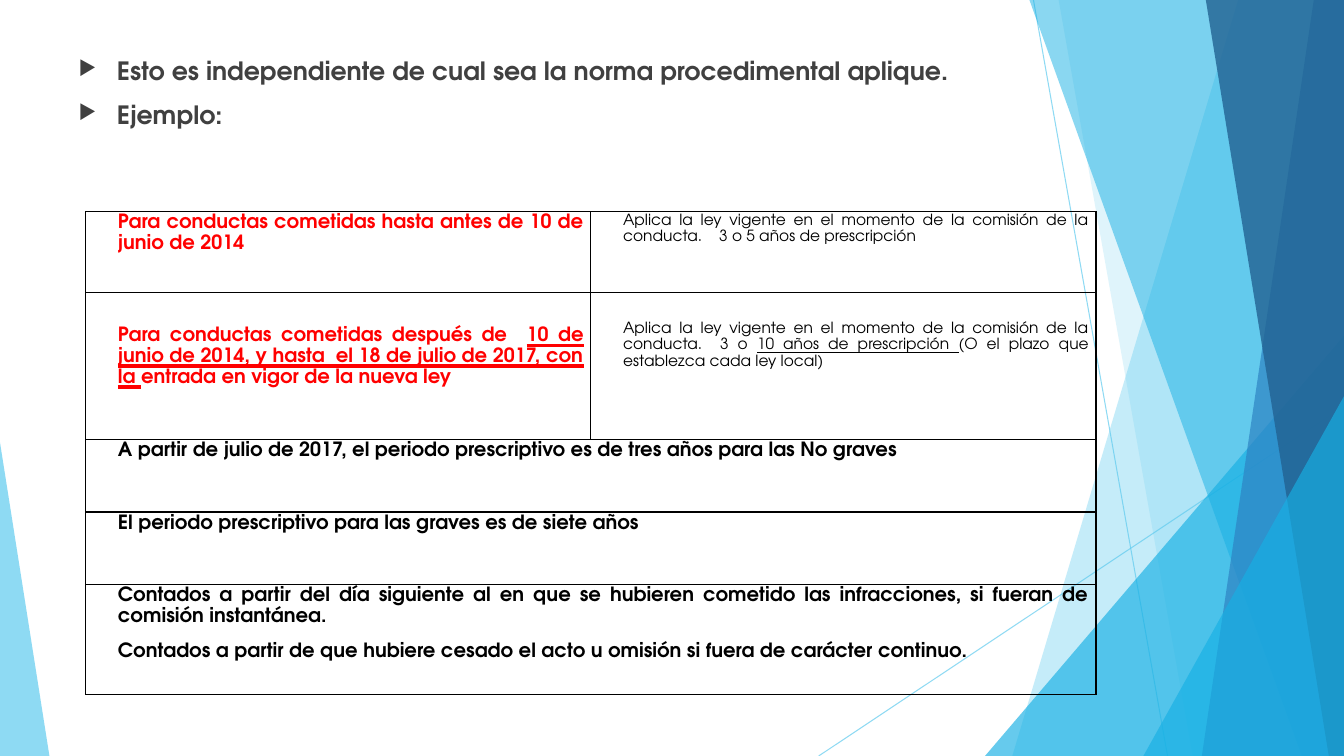
from pptx import Presentation
from pptx.dml.color import RGBColor
from pptx.enum.shapes import MSO_CONNECTOR, MSO_SHAPE
from pptx.enum.text import MSO_ANCHOR, MSO_AUTO_SIZE, MSO_UNDERLINE, PP_ALIGN
from pptx.oxml.ns import qn
from pptx.util import Inches, Pt
from lxml import etree

LINE = MSO_CONNECTOR.STRAIGHT
TRI = MSO_SHAPE.ISOSCELES_TRIANGLE
JUST = PP_ALIGN.JUSTIFY
TOP = MSO_ANCHOR.TOP
NO_FIT = MSO_AUTO_SIZE.NONE
HEAVY = MSO_UNDERLINE.HEAVY_LINE

FONT = "TeX Gyre Adventor"
WIDE, HIGH = 13.33, 7.5
SKY, CYAN, BLUE, NAVY = "5FCBEF", "17B0E4", "2E83C3", "226292"

RAYS = [(10.25, 0, 11.58, HIGH), (WIDE, 4.03, 8.12, HIGH)]
# Bands reach the right edge: x at top, x at bottom, colour, opacity
# Triangles: left, top, width, height, apex, colour, opacity
DECOR = [
    ("band", (12.28, 10.04), SKY, 36),
    ("band", (10.5, 11.83), SKY, 20),
    ("tri", (9.77, 3.33, 3.56, 4.17, 1), CYAN, 66),
    ("band", (10.21, 12.91), CYAN, 50),
    ("band", (13.03, 11.92), BLUE, 70),
    ("band", (11.96, 13.18), NAVY, 80),
    ("tri", (11.34, 3.93, 1.99, 3.57, 1), CYAN, 66),
    ("tri", (0, 4.39, 0.49, 3.11, 0), SKY, 70),
]

POINTS = [
    "Esto es independiente de cual sea la norma procedimental aplique.",
    "Ejemplo:",
]
HEAD = {"size": Pt(18), "bold": True, "name": FONT}
STRONG = {"size": Pt(14), "bold": True, "name": FONT}
PLAIN = {"size": Pt(11), "bold": False, "name": FONT}

COLS = [5.01, 5.01]
ROWS = [0.8, 1.46, 0.72, 0.72, 1.09]
# Each cell: format, colour, top margin, paragraphs made of (text, underline)
RULES = [
    [
        (STRONG, "FF0000", 0, [[
            ("Para conductas cometidas hasta antes de 10 de junio de 2014", False)]]),
        (PLAIN, "000000", 0, [[
            ("Aplica la ley vigente en el momento de la comisión de la conducta.    "
             "3 o 5 años de prescripción", False)]]),
    ],
    [
        (STRONG, "FF0000", 0.32, [[
            ("Para conductas cometidas después de  ", False),
            ("10 de junio de 2014, y hasta  el 18 de julio de 2017, con la ", HEAVY),
            ("entrada en vigor de la nueva ley", False)]]),
        (PLAIN, "000000", 0.27, [[
            ("Aplica la ley vigente en el momento de la comisión de la conducta.  3 o ", False),
            ("10 años de prescripción ", True),
            ("(O el plazo que establezca cada ley local)", False)]]),
    ],
    [(STRONG, "000000", 0, [[
        ("A partir de julio de 2017, el periodo prescriptivo es de tres años "
         "para las No graves", False)]])],
    [(STRONG, "000000", 0, [[
        ("El periodo prescriptivo para las graves es de siete años", False)]])],
    [(STRONG, "000000", 0, [
        [("Contados a partir del día siguiente al en que se hubieren cometido "
          "las infracciones, si fueran de comisión instantánea.", False)],
        [("Contados a partir de que hubiere cesado el acto u omisión si fuera "
          "de carácter continuo.", False)]])],
]


def rgb(code):
    return RGBColor.from_string(code)


def put(item, values):
    for key, value in values.items():
        setattr(item, key, value)


def sub(parent, tag, **attrs):
    return etree.SubElement(parent, qn(tag), attrs)


def fade(fill, code, share):
    """Fill with a solid colour at an opacity in percent."""
    fill.solid()
    fill.fore_color.rgb = rgb(code)
    color = fill._xPr.find(qn("a:solidFill"))[0]
    sub(color, "a:alpha", val=str(share * 1000))


def add_run(para, text, form, code):
    run = para.add_run()
    run.text = text
    put(run.font, form)
    run.font.color.rgb = rgb(code)
    return run


def add_decor(shapes):
    for x1, y1, x2, y2 in RAYS:
        ray = shapes.add_connector(LINE, *map(Inches, (x1, y1, x2, y2)))
        ray.line.width = Pt(0.75)
        fade(ray.line.fill, SKY, 70)
        sub(ray._element.spPr, "a:effectLst")
    for kind, geom, code, share in DECOR:
        if kind == "band":
            top, low = map(Inches, geom)
            right, base = Inches(WIDE), Inches(HIGH)
            path = shapes.build_freeform(top, 0)
            path.add_line_segments([(right, 0), (right, base), (low, base)])
            shape = path.convert_to_shape()
        else:
            *box, apex = geom
            shape = shapes.add_shape(TRI, *map(Inches, box))
            shape.adjustments[0] = apex
        fade(shape.fill, code, share)
        shape.line.fill.background()
        shape.shadow.inherit = False


def add_points(body):
    put(body, {"left": Inches(0.68), "top": Inches(0.5),
               "width": Inches(10.2), "height": Inches(1.38)})
    frame = body.text_frame
    put(frame, {"word_wrap": True, "auto_size": NO_FIT, "vertical_anchor": TOP})
    for i, text in enumerate(POINTS):
        para = frame.add_paragraph() if i else frame.paragraphs[0]
        props = para._p.get_or_add_pPr()
        props.set("marL", str(Inches(0.38)))
        props.set("indent", str(-Inches(0.38)))
        sub(props, "a:buSzPct", val="80000")
        sub(props, "a:buFont", typeface="OpenSymbol")
        sub(props, "a:buChar", char="▶")
        para.space_before = Pt(10 if i else 0)
        add_run(para, text, HEAD, "404040")


def add_borders(cell):
    props = cell._tc.get_or_add_tcPr()
    for i, side in enumerate(("a:lnL", "a:lnR", "a:lnT", "a:lnB")):
        edge = sub(props, side, w=str(Pt(1)))
        sub(sub(edge, "a:solidFill"), "a:srgbClr", val="000000")
        props.insert(i, edge)


def fill_cell(cell, form, code, top, paras):
    put(cell, {"margin_top": Inches(top), "vertical_anchor": TOP})
    for i, parts in enumerate(paras):
        frame = cell.text_frame
        para = frame.add_paragraph() if i else frame.paragraphs[0]
        put(para, {"alignment": JUST, "line_spacing": 1.15, "space_after": Pt(10)})
        para._p.get_or_add_pPr().set("marL", str(Inches(0.25)))
        for text, under in parts:
            run = add_run(para, text, form, code)
            if under:
                run.font.underline = under


def add_rules(shapes):
    box = map(Inches, (0.85, 2.1, sum(COLS), sum(ROWS)))
    table = shapes.add_table(len(ROWS), len(COLS), *box).table
    put(table, {"first_row": False, "horz_banding": False})
    for col, width in zip(table.columns, COLS):
        col.width = Inches(width)
    for row, height in zip(table.rows, ROWS):
        row.height = Inches(height)
    for cell in table.iter_cells():
        put(cell, {"margin_left": Inches(0.07), "margin_right": Inches(0.07),
                   "margin_top": 0, "margin_bottom": 0})
        cell.fill.background()
        add_borders(cell)
    for r, rule in enumerate(RULES):
        if len(rule) == 1:
            table.cell(r, 0).merge(table.cell(r, 1))
        for c, content in enumerate(rule):
            fill_cell(table.cell(r, c), *content)


def main():
    deck = Presentation()
    put(deck, {"slide_width": Inches(WIDE), "slide_height": Inches(HIGH)})
    slide = deck.slides.add_slide(deck.slide_layouts[1])
    title = slide.shapes.title._element
    title.getparent().remove(title)
    body = slide.placeholders[1]
    add_decor(slide.shapes)
    slide.shapes._spTree.append(body._element)
    add_points(body)
    add_rules(slide.shapes)
    deck.save("out.pptx")


if __name__ == "__main__":
    main()
